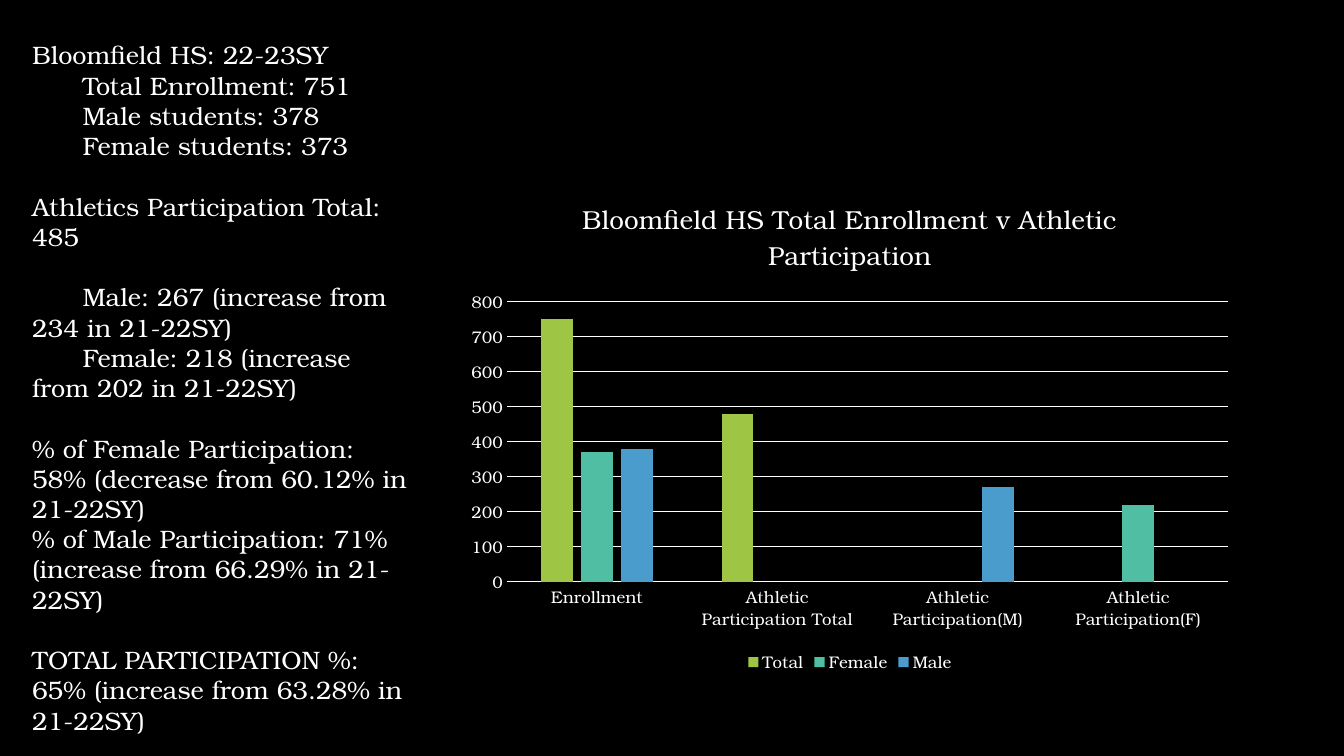
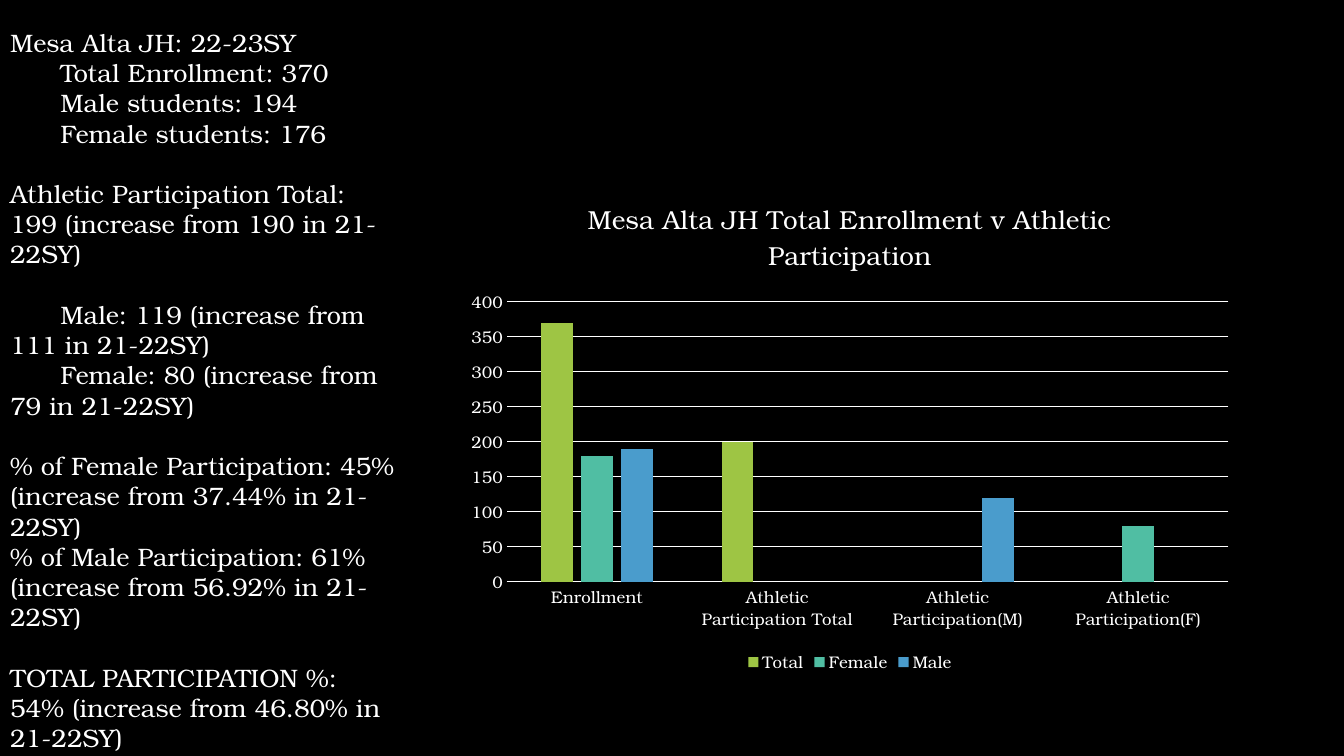
import pptx
import pptx.chart.data
import pptx.dml.color
import pptx.enum.chart
import pptx.enum.text
import pptx.util

PX = 9525
FONT = "TeX Gyre Bonum"
COLORS = {"back": "000000", "text": "FFFFFF",
          "Total": "9EC544", "Female": "50BEA3", "Male": "4A9CCC"}
CATEGORIES = ["Enrollment", "Athletic Participation Total",
              "Athletic Participation(M)", "Athletic Participation(F)"]

SCHOOLS = [
    {"name": "Bloomfield HS", "box": (21, 33, 378, 708),
     "enrolled": (751, 378, 373), "athletes": (485, 267, 218),
     "total": "Athletics Participation Total: 485",
     "male": "increase from 234", "female": "increase from 202",
     "female_rate": "58% (decrease from 60.12%",
     "male_rate": "71% (increase from 66.29%",
     "total_rate": "65% (increase from 63.28%"},
    {"name": "Mesa Alta JH", "box": (0, 21, 387, 736),
     "enrolled": (370, 194, 176), "athletes": (199, 119, 80),
     "total": "Athletic Participation Total: 199 (increase from 190 in 21-22SY)",
     "male": "increase from 111", "female": "increase from 79",
     "female_rate": "45% (increase from 37.44%",
     "male_rate": "61% (increase from 56.92%",
     "total_rate": "54% (increase from 46.80%"},
]


def rgb(name):
    return pptx.dml.color.RGBColor.from_string(COLORS[name])


class Deck:
    """Holds the shared style and the current slide."""

    def __init__(self):
        self.prs = pptx.Presentation()
        self.prs.slide_width, self.prs.slide_height = 1280 * PX, 720 * PX
        fill = self.prs.slide_master.background.fill
        fill.solid()
        fill.fore_color.rgb = rgb("back")

    def add_slide(self):
        self.slide = self.prs.slides.add_slide(self.prs.slide_layouts[1])
        title = self.slide.shapes.title._element
        title.getparent().remove(title)

    def style_font(self, font, size):
        font.name = FONT
        font.size = pptx.util.Pt(size)
        font.bold = False
        font.color.rgb = rgb("text")

    def style_line(self, line):
        line.color.rgb = rgb("text")
        line.width = pptx.util.Pt(0.75)

    def add_list(self, box, lines):
        """Each line is (text, first-line indent in px, space before in pt)."""
        sp = self.slide.placeholders[1]
        sp.left, sp.top, sp.width, sp.height = (v * PX for v in box)
        tf = sp.text_frame
        tf.word_wrap = True
        tf.auto_size = pptx.enum.text.MSO_AUTO_SIZE.NONE
        tf.vertical_anchor = pptx.enum.text.MSO_ANCHOR.TOP
        for i, (text, indent, before) in enumerate(lines):
            p = tf.add_paragraph() if i else tf.paragraphs[0]
            p.space_before = pptx.util.Pt(before)
            pPr = p._p.get_or_add_pPr()
            pPr.set("marL", "0")
            pPr.set("indent", str(indent * PX))
            pPr.append(pptx.oxml.parse_xml(
                '<a:buNone xmlns:a="http://schemas.openxmlformats.org/'
                'drawingml/2006/main"/>'))
            r = p.add_run()
            r.text = text
            self.style_font(r.font, 18)

    def add_columns(self, box, title, series):
        data = pptx.chart.data.CategoryChartData()
        data.categories = CATEGORIES
        for name, values in series.items():
            data.add_series(name, values)
        chart = self.slide.shapes.add_chart(
            pptx.enum.chart.XL_CHART_TYPE.COLUMN_CLUSTERED,
            *(v * PX for v in box), data).chart
        self.style_font(chart.font, 10)

        chart.has_title = True
        r = chart.chart_title.text_frame.paragraphs[0].add_run()
        r.text = title
        self.style_font(r.font, 18.6)
        chart.chart_title.include_in_layout = False

        chart.has_legend = True
        chart.legend.position = pptx.enum.chart.XL_LEGEND_POSITION.BOTTOM
        chart.legend.include_in_layout = False
        self.style_font(chart.legend.font, 12)

        for axis in (chart.category_axis, chart.value_axis):
            axis.major_tick_mark = pptx.enum.chart.XL_TICK_MARK.NONE
            axis.minor_tick_mark = pptx.enum.chart.XL_TICK_MARK.NONE
            self.style_font(axis.tick_labels.font, 12)
        self.style_line(chart.category_axis.format.line)
        chart.value_axis.format.line.fill.background()
        self.style_line(chart.value_axis.major_gridlines.format.line)

        plot = chart.plots[0]
        plot.gap_width, plot.overlap = 219, -27
        plot.vary_by_categories = False
        for s in plot.series:
            s.format.fill.solid()
            s.format.fill.fore_color.rgb = rgb(s.name)


def report_lines(school):
    total, male, female = school["enrolled"]
    _, male_athletes, female_athletes = school["athletes"]
    tab, blank = 48, 21.6
    year = "in 21-22SY)"
    return [
        (f"{school['name']}: 22-23SY", 0, 0),
        (f"Total Enrollment: {total}", tab, 0),
        (f"Male students: {male}", tab, 0),
        (f"Female students: {female}", tab, 0),
        (school["total"], 0, blank),
        (f"Male: {male_athletes} ({school['male']} {year}", tab, blank),
        (f"Female: {female_athletes} ({school['female']} {year}", tab, 0),
        (f"% of Female Participation: {school['female_rate']} {year}", 0, blank),
        (f"% of Male Participation: {school['male_rate']} {year}", 0, 0),
        ("TOTAL PARTICIPATION %:", 0, blank),
        (f"{school['total_rate']} {year}", 0, 0),
    ]


def chart_series(school):
    """Head counts by series, rounded to tens."""
    total, male, female = (round(v, -1) for v in school["enrolled"])
    athletes, male_athletes, female_athletes = (
        round(v, -1) for v in school["athletes"])
    return {"Total": (total, athletes, None, None),
            "Female": (female, None, None, female_athletes),
            "Male": (male, None, male_athletes, None)}


def main():
    deck = Deck()
    for school in SCHOOLS:
        deck.add_slide()
        deck.add_list(school["box"], report_lines(school))
        deck.add_columns(
            (434, 170, 751, 475),
            f"{school['name']} Total Enrollment v Athletic Participation",
            chart_series(school))
    deck.prs.save("out.pptx")


if __name__ == "__main__":
    main()
